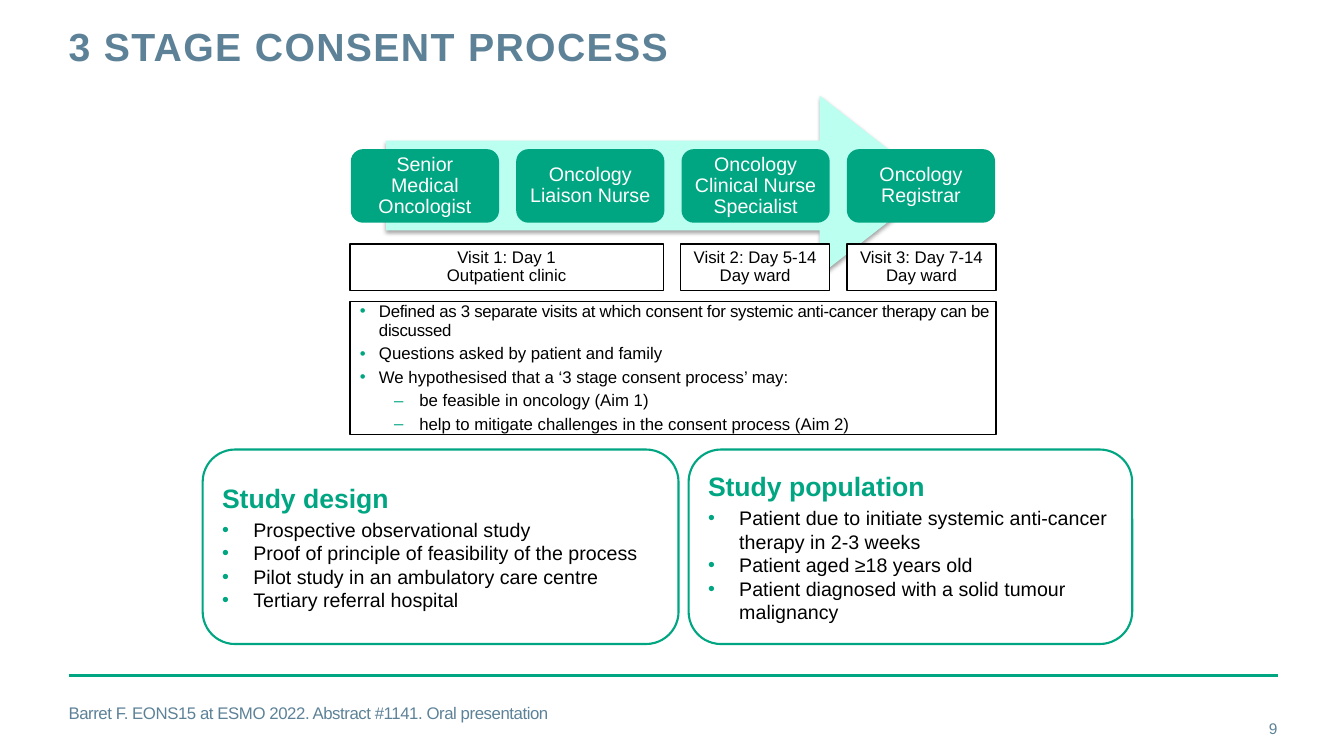
from copy import deepcopy
from dataclasses import dataclass

from lxml.etree import SubElement
from pptx import Presentation
from pptx.dml.color import RGBColor as RGB
from pptx.enum.shapes import MSO_CONNECTOR as CONN, MSO_SHAPE as SHAPE
from pptx.enum.text import MSO_ANCHOR as ANCHOR, PP_ALIGN as ALIGN
from pptx.oxml.ns import qn
from pptx.util import Inches, Pt

COLORS = {"green": "00A582", "mint": "BAFFF0", "slate": "5D8298",
          "black": "000000", "white": "FFFFFF"}
Box = tuple[float, float, float, float]


@dataclass
class Para:
    text: str
    size: float = 12
    color: str = "black"
    bold: bool = False
    spacing: float = 0  # letter spacing in points
    bullet: str = ""
    margin: float = 0
    hang: float = 0
    level: int = 0
    line: float | Pt = 1.0
    after: float = 0
    align: ALIGN = ALIGN.LEFT


@dataclass
class Panel:
    box: Box
    paras: list[Para]
    kind: SHAPE = SHAPE.RECTANGLE
    fill: str = "white"
    line: str = ""
    width: float = 1
    insets: Box = (0.1, 0.05, 0.1, 0.05)


def color(name: str) -> RGB:
    return RGB.from_string(COLORS[name])


def apply(target, values: dict) -> None:
    for name, value in values.items():
        setattr(target, name, value)


def add_bullet(p, item: Para) -> None:
    pPr = p._p.get_or_add_pPr()
    pPr.set("marL", str(Inches(item.margin)))
    pPr.set("indent", str(-Inches(item.hang)))
    clr = SubElement(pPr, qn("a:buClr"))
    SubElement(clr, qn("a:srgbClr"), val=COLORS["green"])
    SubElement(pPr, qn("a:buFont"), typeface="Arial")
    SubElement(pPr, qn("a:buChar"), char=item.bullet)


def write(tf, paras: list[Para], insets: Box, anchor: ANCHOR) -> None:
    sides = ("margin_left", "margin_top", "margin_right", "margin_bottom")
    apply(tf, {"word_wrap": True, "vertical_anchor": anchor,
               **{side: Inches(v) for side, v in zip(sides, insets)}})
    for i, item in enumerate(paras):
        p = tf.add_paragraph() if i else tf.paragraphs[0]
        p.text = item.text
        apply(p, {"alignment": item.align, "level": item.level,
                  "line_spacing": item.line, "space_before": Pt(0),
                  "space_after": Pt(item.after)})
        if item.bullet:
            add_bullet(p, item)
        for r in p.runs:
            apply(r.font, {"name": "Arial", "size": Pt(item.size), "bold": item.bold})
            r.font.color.rgb = color(item.color)
            if item.spacing:
                r.font._element.set("spc", str(round(item.spacing * 100)))
        # Line breaks take the size of the text around them
        for br in p._p.findall(qn("a:br")):
            br.append(deepcopy(p.runs[0].font._element))


def add_text(s, box: Box, para: Para, anchor: ANCHOR = ANCHOR.TOP, top: float = 0) -> None:
    sp = s.shapes.add_textbox(*map(Inches, box))
    write(sp.text_frame, [para], (0, top, 0, 0), anchor)


def add_panel(s, panel: Panel):
    sp = s.shapes.add_shape(panel.kind, *map(Inches, panel.box))
    sp.shadow.inherit = False
    sp.fill.solid()
    sp.fill.fore_color.rgb = color(panel.fill)
    if panel.line:
        sp.line.color.rgb = color(panel.line)
        sp.line.width = Pt(panel.width)
    else:
        sp.line.fill.background()
    if panel.paras:
        write(sp.text_frame, panel.paras, panel.insets, ANCHOR.MIDDLE)
    return sp


def add_arrow(s) -> None:
    sp = add_panel(s, Panel((3.83, 0.95, 5.44, 1.78), [], SHAPE.RIGHT_ARROW, "mint"))
    sp.adjustments[1] = 0.64
    effects = sp._element.spPr.find(qn("a:effectLst"))
    shadow = SubElement(effects, qn("a:outerShdw"), blurRad=str(Pt(3.1)),
                        dist=str(Pt(1.8)), dir="5400000", rotWithShape="0")
    clr = SubElement(shadow, qn("a:srgbClr"), val=COLORS["black"])
    SubElement(clr, qn("a:alpha"), val="35000")


def add_rule(s) -> None:
    rule = s.shapes.add_connector(CONN.STRAIGHT, *map(Inches, (0.68, 6.7, 12.68, 6.7)))
    rule.line.color.rgb = color("green")
    rule.line.width = Pt(2)
    SubElement(rule._element.spPr, qn("a:effectLst"))


def study_panel(left: float, width: float, heading: str, points: list[str]) -> Panel:
    paras = [Para(heading, 19, "green", True, after=3)]
    paras += [Para(t, 14, bullet="•", margin=0.31, hang=0.31) for t in points]
    return Panel((left, 4.46, width, 1.93), paras, SHAPE.ROUNDED_RECTANGLE,
                 line="green", width=1.5)


def stage_panel(index: int, lines: list[str]) -> Panel:
    paras = [Para(t, 14, "white", line=0.9, align=ALIGN.CENTER) for t in lines]
    return Panel((3.48 + 1.64 * index, 1.48, 1.47, 0.73), paras,
                 SHAPE.ROUNDED_RECTANGLE, "green", insets=(0.05,) * 4)


def visit_panel(left: float, width: float, text: str) -> Panel:
    return Panel((left, 2.42, width, 0.46),
                 [Para(text, line=0.9, align=ALIGN.CENTER)], line="black")


def note(text: str, spacing: float = 0) -> Para:
    return Para(text, spacing=spacing, bullet="•", margin=0.19, hang=0.19,
                line=0.95, after=3)


def aim(text: str) -> Para:
    return Para(text, bullet="–", margin=0.59, hang=0.25, level=1, line=0.95, after=3)


STUDY = [
    study_panel(2.01, 4.72, "Study design", [
        "Prospective observational study",
        "Proof of principle of feasibility of the process",
        "Pilot study in an ambulatory care centre",
        "Tertiary referral hospital"]),
    study_panel(6.83, 4.4, "Study population", [
        "Patient due to initiate systemic anti-cancer therapy in 2-3 weeks",
        "Patient aged ≥18 years old",
        "Patient diagnosed with a solid tumour malignancy"]),
]
STAGES = [["Senior\nMedical\nOncologist"], ["Oncology\nLiaison Nurse"],
          ["Oncology\nClinical Nurse", "Specialist"], ["Oncology\nRegistrar"]]
VISITS = [(3.47, 3.11, "Visit 1: Day 1\nOutpatient clinic"),
          (6.75, 1.48, "Visit 2: Day 5-14\nDay ward"),
          (8.4, 1.48, "Visit 3: Day 7-14\nDay ward")]
NOTES = Panel((3.47, 2.99, 6.41, 1.32), [
    note("Defined as 3 separate visits at which consent for systemic "
         "anti-cancer therapy can be discussed", -0.2),
    note("Questions asked by patient and family"),
    note("We hypothesised that a ‘3 stage consent process’ may:"),
    aim("be feasible in oncology (Aim 1)"),
    aim("help to mitigate challenges in the consent process (Aim 2)"),
], line="black", insets=(0.1, 0.05, 0, 0.05))


def main() -> None:
    prs = Presentation()
    apply(prs, {"slide_width": Inches(13.33), "slide_height": Inches(7.5)})
    s = prs.slides.add_slide(prs.slide_layouts[6])

    # Title, footer rule, source and page number
    add_rule(s)
    add_text(s, (0.68, 0.27, 9.56, 0.88),
             Para("3 STAGE CONSENT PROCESS", 28, "slate", True, 1, line=Pt(30)))
    add_text(s, (11.81, 7.03, 0.86, 0.4),
             Para("9", 11, "slate", align=ALIGN.RIGHT), ANCHOR.MIDDLE)
    add_text(s, (0.68, 6.95, 11.13, 0.4),
             Para("Barret F. EONS15 at ESMO 2022. Abstract #1141. Oral presentation",
                  12, "slate", spacing=-0.3), top=0.02)

    # Study boxes, then the arrow with its stages, visits and notes
    for panel in STUDY:
        add_panel(s, panel)
    add_arrow(s)
    for i, lines in enumerate(STAGES):
        add_panel(s, stage_panel(i, lines))
    for visit in VISITS:
        add_panel(s, visit_panel(*visit))
    add_panel(s, NOTES)
    prs.save("out.pptx")


if __name__ == "__main__":
    main()
